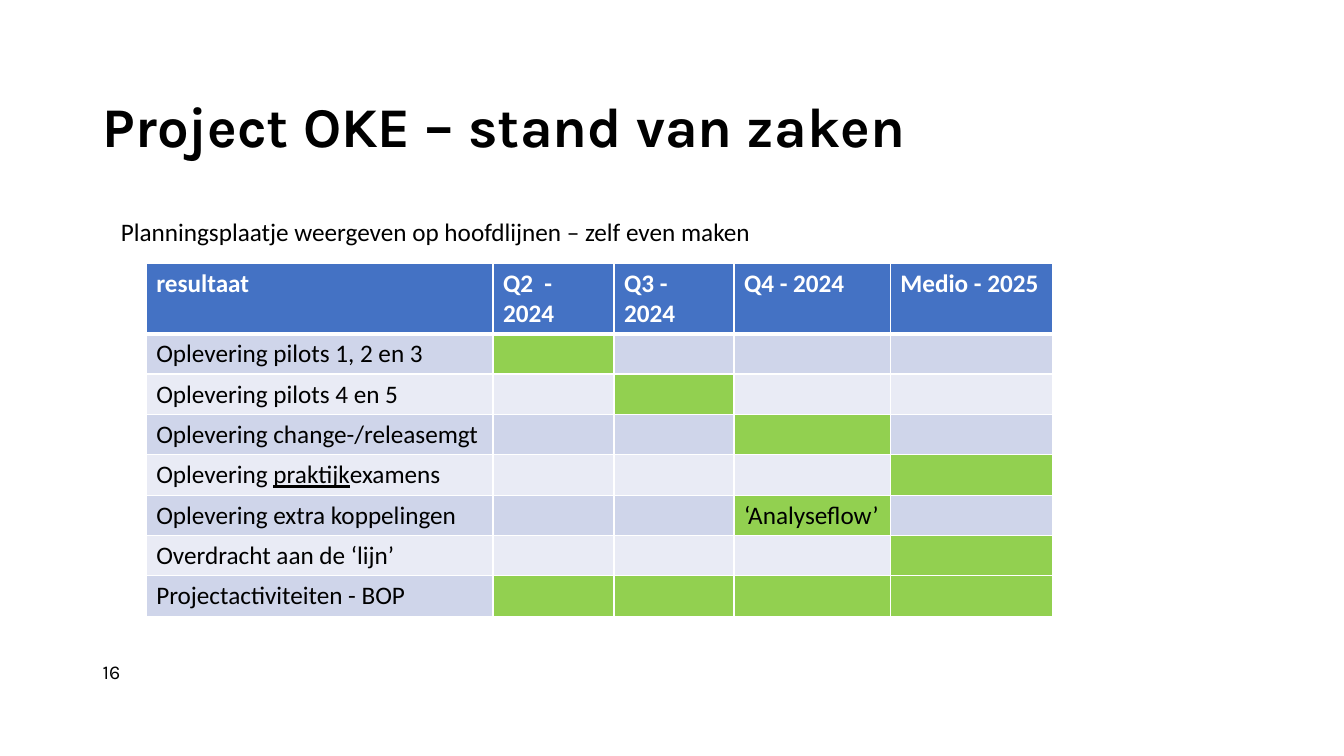
from dataclasses import dataclass

from lxml.etree import SubElement
from pptx import Presentation
from pptx.dml.color import RGBColor as RGB
from pptx.enum.text import MSO_ANCHOR as ANCHOR, MSO_AUTO_SIZE as FIT, PP_ALIGN as ALIGN
from pptx.oxml.ns import qn
from pptx.util import Inches, Pt


@dataclass(frozen=True)
class Theme:
    heading: str = "Karla"
    body: str = "Calibri"
    title_size: int = 40
    body_size: int = 18
    number_size: int = 14
    black: str = "000000"
    white: str = "FFFFFF"
    header: str = "4472C4"
    odd_row: str = "CFD5EA"
    even_row: str = "E9EBF5"
    planned: str = "92D050"


theme = Theme()


def style(paragraph, face, size, color, bold=False):
    paragraph.alignment = ALIGN.LEFT
    font = paragraph.font
    font.name, font.size, font.bold = face, Pt(size), bold
    font.color.rgb = RGB.from_string(color)


def paint_cell(cell, fill, top, bottom):
    properties = cell._tc.get_or_add_tcPr()
    for side, width in (("lnL", 1), ("lnR", 1), ("lnT", top), ("lnB", bottom)):
        line = SubElement(properties, qn(f"a:{side}"), w=str(Pt(width)))
        solid = SubElement(line, qn("a:solidFill"))
        SubElement(solid, qn("a:srgbClr"), val=theme.white)
    cell.fill.solid()
    cell.fill.fore_color.rgb = RGB.from_string(fill)


presentation = Presentation()
presentation.slide_width, presentation.slide_height = Inches(13.33), Inches(7.5)
slide = presentation.slides.add_slide(presentation.slide_layouts[5])

title = slide.shapes.title
title.left, title.top = Inches(0.92), Inches(0.72)
title.width, title.height = Inches(11.5), Inches(1.13)
title.text_frame.text = "Project OKE – stand van zaken"
title.text_frame.vertical_anchor = ANCHOR.MIDDLE
title.text_frame.auto_size = FIT.NONE
heading = title.text_frame.paragraphs[0]
heading.line_spacing = 0.9
style(heading, theme.heading, theme.title_size, theme.black, True)

captions = [
    ("16", 0.92, 6.5, 3, 0.33, theme.heading, theme.number_size),
    ("Planningsplaatje weergeven op hoofdlijnen – zelf even maken",
     1.1, 2.1, 8.95, 1.01, theme.body, theme.body_size),
]
for text, left, top, width, height, face, size in captions:
    caption = slide.shapes.add_textbox(Inches(left), Inches(top), Inches(width), Inches(height))
    caption.text_frame.word_wrap = True
    caption.text_frame.text = text
    style(caption.text_frame.paragraphs[0], face, size, theme.black)

periods = ["resultaat", "Q2  - 2024", "Q3 - 2024", "Q4 - 2024", "Medio - 2025"]
results = [
    (["Oplevering pilots 1, 2 en 3"], {1: ""}),
    (["Oplevering pilots 4 en 5"], {2: ""}),
    (["Oplevering change-/releasemgt"], {3: ""}),
    (["Oplevering ", "praktijk", "examens"], {4: ""}),
    (["Oplevering extra koppelingen"], {3: "‘Analyseflow’"}),
    (["Overdracht aan de ‘lijn’"], {4: ""}),
    (["Projectactiviteiten - BOP"], {1: "", 2: "", 3: "", 4: ""}),
]
column_widths = [3.44, 1.2, 1.19, 1.55, 1.61]
row_height = 0.4
row_count = len(results) + 1

planning = slide.shapes.add_table(
    row_count, len(periods), Inches(1.45), Inches(2.61),
    Inches(sum(column_widths)), Inches(row_height * row_count)).table
for column, width in zip(planning.columns, column_widths):
    column.width = Inches(width)
for row in planning.rows:
    row.height = Inches(row_height)

for column, period in enumerate(periods):
    cell = planning.cell(0, column)
    cell.text = period
    style(cell.text_frame.paragraphs[0], theme.body, theme.body_size, theme.white, True)
    paint_cell(cell, theme.header, 1, 3)

for row, (result, planned) in enumerate(results, 1):
    band = theme.odd_row if row % 2 else theme.even_row
    for column in range(len(periods)):
        cell = planning.cell(row, column)
        paragraph = cell.text_frame.paragraphs[0]
        style(paragraph, theme.body, theme.body_size, theme.black)
        for part in result if column == 0 else [planned.get(column, "")]:
            if part:
                run = paragraph.add_run()
                run.text = part
                if part == "praktijk":
                    run.font.underline = True
        paint_cell(cell, theme.planned if column in planned else band, 3 if row == 1 else 1, 1)

presentation.save("out.pptx")
